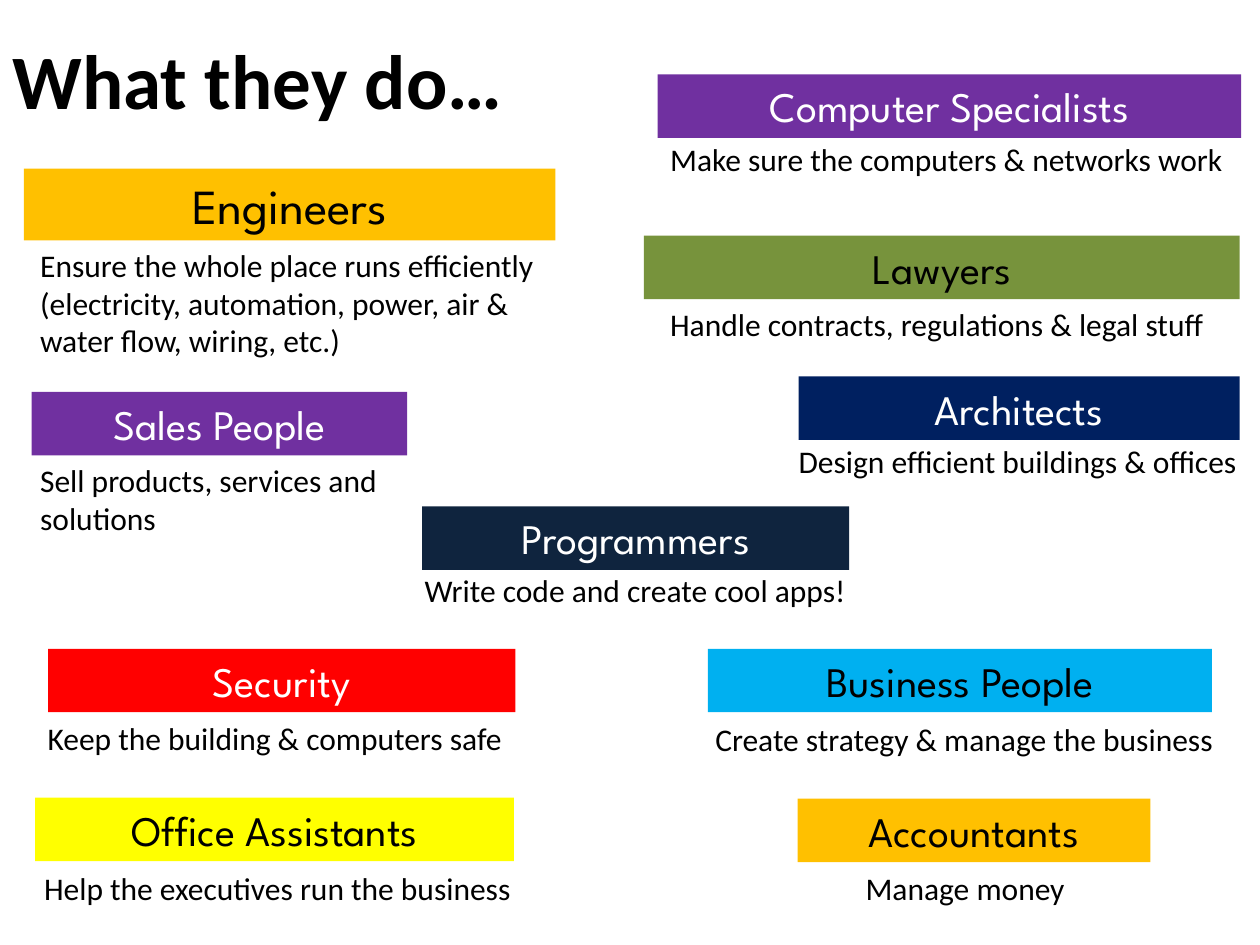
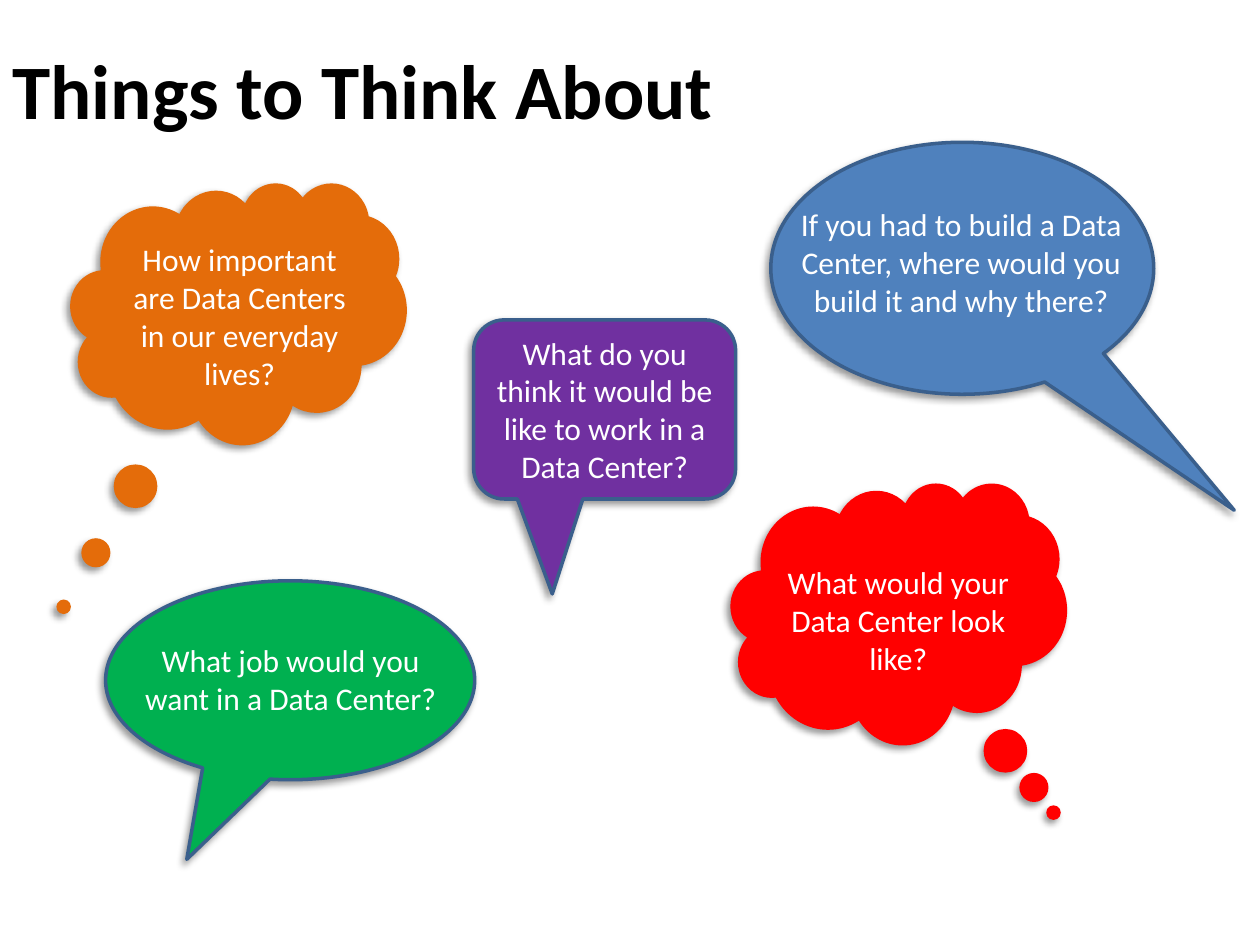
from lxml import etree
from pptx import Presentation
from pptx.dml.color import RGBColor
from pptx.enum.shapes import MSO_SHAPE
from pptx.enum.text import MSO_ANCHOR, PP_ALIGN
from pptx.oxml.ns import qn
from pptx.util import Cm, Pt

RECTANGLE = MSO_SHAPE.RECTANGLE
CLOUD = MSO_SHAPE.CLOUD_CALLOUT
OVAL_BUBBLE = MSO_SHAPE.OVAL_CALLOUT
ROUND_BUBBLE = MSO_SHAPE.ROUNDED_RECTANGULAR_CALLOUT
LEFT, CENTER = PP_ALIGN.LEFT, PP_ALIGN.CENTER
MIDDLE = MSO_ANCHOR.MIDDLE

BODY_FONT = "Calibri"
JOB_FONT = "League Spartan"
COLORS = {
    "black": "000000", "white": "FFFFFF", "amber": "FFC000",
    "purple": "7030A0", "sky": "00B0F0", "navy": "002060",
    "red": "FF0000", "yellow": "FFFF00", "olive": "77933C",
    "midnight": "0F243E", "orange": "E46C0A", "blue": "4F81BD",
    "green": "00B050", "outline": "3A5F8C",
}

# job, fill, text colour, bar (left, top, width), duty, duty (left, top, width), duty lines
JOBS = [
    ("Computer Specialists", "purple", "white", (13.26, 1.5, 11.76),
     "Make sure the computers & networks work", (13.26, 2.69, 12), 1),
    ("Engineers", "amber", "black", (0.48, 3.4, 10.72),
     "Ensure the whole place runs efficiently (electricity, automation, "
     "power, air & water flow, wiring, etc.)", (0.56, 4.83, 10.49), 3),
    ("Lawyers", "olive", "black", (12.98, 4.75, 12.01),
     "Handle contracts, regulations & legal stuff", (13.26, 6.02, 11.66), 1),
    ("Sales People", "purple", "white", (0.64, 7.9, 7.57),
     "Sell products, services and solutions", (0.56, 9.17, 7.65), 2),
    ("Architects", "navy", "white", (16.1, 7.59, 8.89),
     "Design efficient buildings & offices", (15.85, 8.79, 9.42), 1),
    ("Programmers", "midnight", "white", (8.51, 10.21, 8.61),
     "Write code and create cool apps!", (8.31, 11.38, 9.42), 1),
    ("Security", "red", "white", (0.97, 13.08, 9.42),
     "Keep the building & computers safe", (0.71, 14.38, 10), 1),
    ("Business People", "sky", "black", (14.27, 13.08, 10.16),
     "Create strategy & manage the business", (14.17, 14.4, 10.72), 1),
    ("Office Assistants", "yellow", "black", (0.71, 16.08, 9.65),
     "Help the executives run the business", (0.64, 17.4, 10.59), 1),
    ("Accountants", "amber", "black", (16.08, 16.1, 7.11),
     "Manage money", (17.2, 17.4, 5), 1),
]
LEAD_JOB = "Engineers"

# bubble, fill, outlined, box, adjustments, question, question (left, top, width), lines
QUESTIONS = [
    (CLOUD, "orange", False, (1.42, 3.68, 6.78, 5.28), (-0.52, 1.12),
     "How important are Data Centers in our everyday lives?",
     (2.29, 4.72, 5.08), 4),
    (ROUND_BUBBLE, "purple", True, (9.55, 6.45, 5.28, 3.61), (-0.2, 1.03, 0.17),
     "What do you think it would be like to work in a Data Center?",
     (9.65, 6.6, 5.08), 4),
    (OVAL_BUBBLE, "blue", True, (15.54, 2.87, 7.72, 5.08), (0.71, 0.96),
     "If you had to build a Data Center, where would you build it and why there?",
     (15.52, 4.01, 7.72), 3),
    (CLOUD, "red", False, (14.73, 9.73, 6.78, 5.28), (0.46, 0.76),
     "What would your Data Center look like?", (15.47, 11.23, 5.28), 3),
    (OVAL_BUBBLE, "green", True, (2.13, 11.71, 7.44, 4.01), (-0.28, 0.9),
     "What job would you want in a Data Center?", (2.57, 12.8, 6.58), 2),
]


def rgb(name):
    return RGBColor.from_string(COLORS[name])


def write(frame, text, size, color, align=LEFT, font=BODY_FONT, bold=False):
    frame.word_wrap = True
    frame.text = text
    paragraph = frame.paragraphs[0]
    paragraph.alignment = align
    for run in paragraph.runs:
        run.font.name = font
        run.font.size = Pt(size)
        run.font.bold = bold
        run.font.color.rgb = rgb(color)


def add_titled_slide(deck, text, top, width):
    slide = deck.slides.add_slide(deck.slide_layouts[5])
    title = slide.shapes.title
    title.left, title.top = Cm(0), Cm(top)
    title.width, title.height = Cm(width), Cm(3.18)
    title.text_frame.vertical_anchor = MIDDLE
    write(title.text_frame, text, 44, "black", bold=True)
    return slide


def add_filled_shape(slide, preset, box, fill):
    shape = slide.shapes.add_shape(preset, *map(Cm, box))
    shape.shadow.inherit = False
    shape.fill.solid()
    shape.fill.fore_color.rgb = rgb(fill)
    shape.line.fill.background()
    return shape


def add_caption(slide, text, place, lines, color, align=LEFT):
    """Add 18 pt text in a box as tall as its number of lines."""
    caption = slide.shapes.add_textbox(*map(Cm, place), Cm(0.25 + 0.77 * lines))
    write(caption.text_frame, text, 18, color, align)


def add_job_bar(slide, job, fill, color, place):
    size, height = (28, 1.45) if job == LEAD_JOB else (24, 1.28)
    bar = add_filled_shape(slide, RECTANGLE, (*place, height), fill)
    write(bar.text_frame, job, size, color, CENTER, JOB_FONT)


def cast_shadow(shape):
    """Give the shape a soft shadow to its lower left."""
    effects = shape._element.spPr.find(qn("a:effectLst"))
    shadow = etree.SubElement(
        effects, qn("a:outerShdw"), blurRad=str(Pt(4)), dist=str(Pt(3)),
        dir=str(135 * 60000), algn="tr", rotWithShape="0")
    tint = etree.SubElement(shadow, qn("a:srgbClr"), val=COLORS["black"])
    etree.SubElement(tint, qn("a:alpha"), val="40000")


def add_bubble(slide, preset, fill, outlined, box, adjustments):
    bubble = add_filled_shape(slide, preset, box, fill)
    for index, value in enumerate(adjustments):
        bubble.adjustments[index] = value
    if outlined:
        bubble.line.color.rgb = rgb("outline")
        bubble.line.width = Pt(2)
    cast_shadow(bubble)


def build_jobs_slide(deck):
    slide = add_titled_slide(deck, "What they do…", 0, 12.7)
    for job, fill, color, bar_place, duty, duty_place, lines in JOBS:
        add_job_bar(slide, job, fill, color, bar_place)
        add_caption(slide, duty, duty_place, lines, "black")


def build_questions_slide(deck):
    slide = add_titled_slide(deck, "Things to Think About", 0.2, 22.86)
    for *bubble, question, place, lines in QUESTIONS:
        add_bubble(slide, *bubble)
        add_caption(slide, question, place, lines, "white", CENTER)


def main():
    deck = Presentation()
    deck.slide_width, deck.slide_height = Cm(25.4), Cm(19.05)
    build_jobs_slide(deck)
    build_questions_slide(deck)
    deck.save("out.pptx")


if __name__ == "__main__":
    main()
